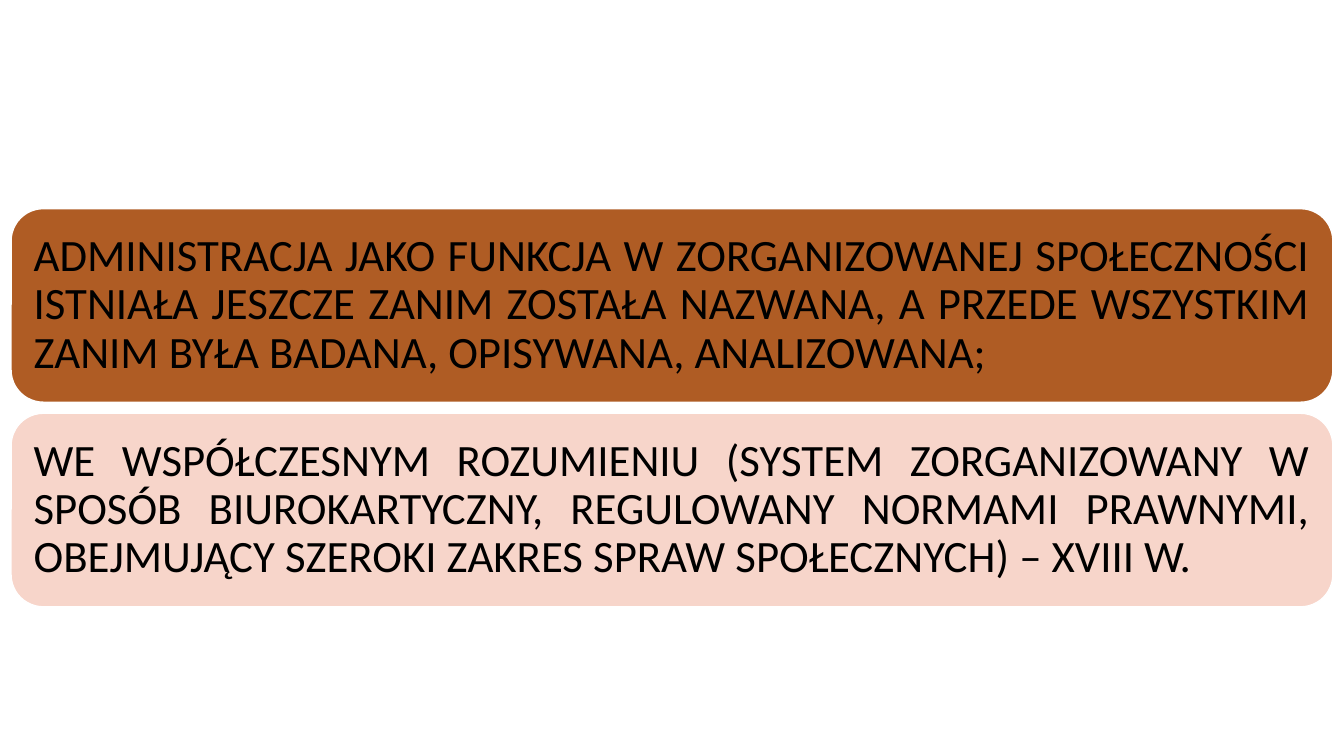
from dataclasses import dataclass

from pptx import Presentation
from pptx.dml.color import RGBColor
from pptx.enum.shapes import MSO_SHAPE
from pptx.enum.text import MSO_ANCHOR, PP_ALIGN
from pptx.util import Inches, Pt

ROUND = MSO_SHAPE.ROUNDED_RECTANGLE
MIDDLE = MSO_ANCHOR.MIDDLE
JUSTIFY = PP_ALIGN.JUSTIFY

CARDS = [
    ("AF5C24", "ADMINISTRACJA JAKO FUNKCJA W ZORGANIZOWANEJ SPOŁECZNOŚCI "
               "ISTNIAŁA JESZCZE ZANIM ZOSTAŁA NAZWANA, A PRZEDE WSZYSTKIM "
               "ZANIM BYŁA BADANA, OPISYWANA, ANALIZOWANA; "),
    ("F7D5CA", "WE WSPÓŁCZESNYM ROZUMIENIU (SYSTEM ZORGANIZOWANY W SPOSÓB "
               "BIUROKARTYCZNY, REGULOWANY NORMAMI PRAWNYMI, OBEJMUJĄCY "
               "SZEROKI ZAKRES SPRAW SPOŁECZNYCH) – XVIII W. "),
]


@dataclass
class Theme:
    font: str = "Calibri"
    size: int = 32
    ink: str = "000000"
    edge: str = "FFFFFF"


THEME = Theme()
LEFT, TOP, WIDTH, HEIGHT = 0.11, 2.07, 13.11, 1.92
GAP = 0.11
INSET = 0.13


def color(code):
    return RGBColor.from_string(code)


def add_card(slide, top, fill, text):
    card = slide.shapes.add_shape(
        ROUND, Inches(LEFT), Inches(top), Inches(WIDTH), Inches(HEIGHT))
    card.shadow.inherit = False
    card.fill.solid()
    card.fill.fore_color.rgb = color(fill)
    card.line.color.rgb = color(THEME.edge)
    card.line.width = Pt(1)

    frame = card.text_frame
    frame.word_wrap = True
    frame.vertical_anchor = MIDDLE
    frame.margin_left = frame.margin_right = Inches(INSET)
    frame.margin_top = frame.margin_bottom = Inches(INSET)

    para = frame.paragraphs[0]
    para.alignment = JUSTIFY
    para.line_spacing = 0.9
    run = para.add_run()
    run.text = text
    run.font.name = THEME.font
    run.font.size = Pt(THEME.size)
    run.font.color.rgb = color(THEME.ink)


def main():
    deck = Presentation()
    deck.slide_width = Inches(13.33)
    deck.slide_height = Inches(7.5)
    slide = deck.slides.add_slide(deck.slide_layouts[6])
    for row, (fill, text) in enumerate(CARDS):
        add_card(slide, TOP + row * (HEIGHT + GAP), fill, text)
    deck.save("out.pptx")


if __name__ == "__main__":
    main()
